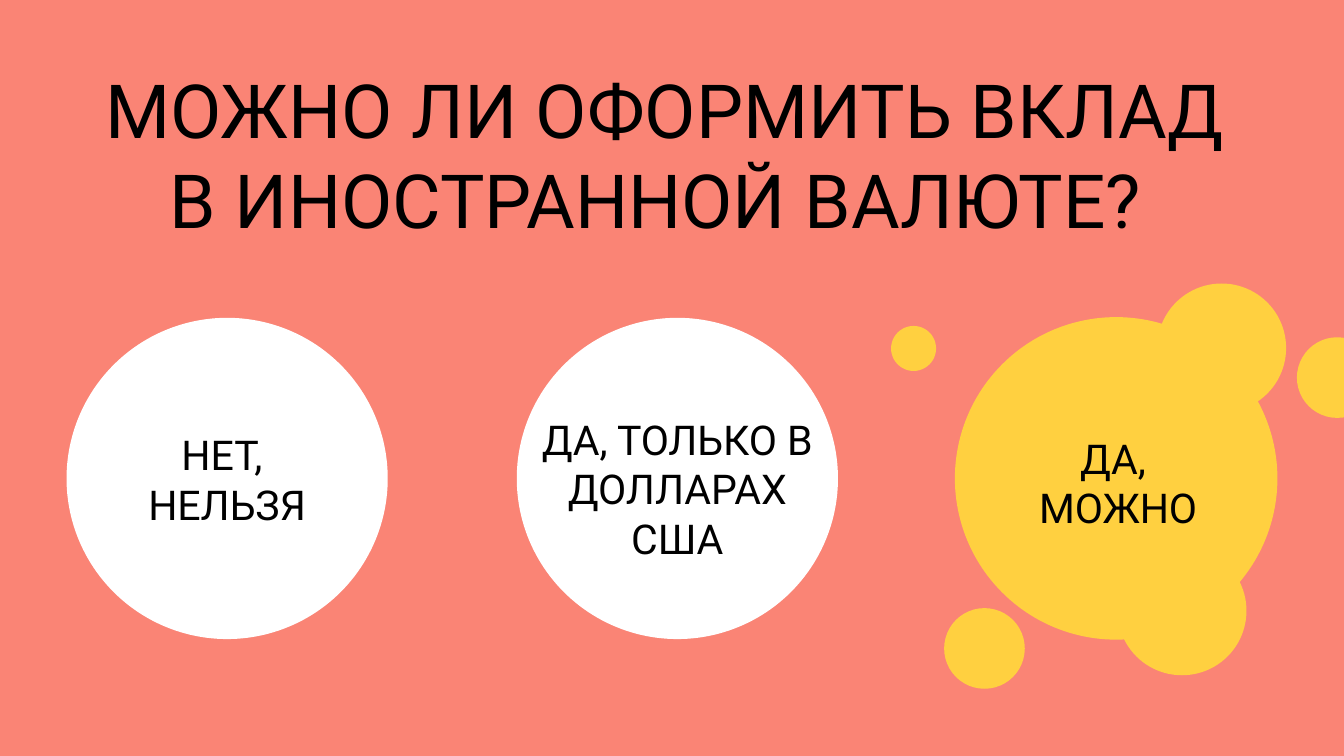
from dataclasses import dataclass

import pptx
import pptx.dml.color
import pptx.enum.shapes
import pptx.enum.text
import pptx.util

PX = 4572
WIDTH, HEIGHT = 2000, 1125
FONT = "Roboto"
COLORS = {"coral": "FA8475", "white": "FFFFFF", "yellow": "FFD040", "text": "000000"}
OVAL = pptx.enum.shapes.MSO_SHAPE.OVAL
RECTANGLE = pptx.enum.shapes.MSO_SHAPE.RECTANGLE


@dataclass
class Circle:
    left: int
    top: int
    size: int
    color: str


@dataclass
class Label:
    text: str
    left: int
    top: int
    width: int
    height: int


ANSWER_CIRCLES = [Circle(left, 473, 478, "white") for left in (99, 769)]
SPLASH = [
    Circle(left, top, size, "yellow")
    for left, top, size in (
        (1421, 472, 480),
        (1722, 422, 192),
        (1663, 813, 192),
        (1405, 905, 120),
        (1930, 502, 120),
        (1326, 485, 67),
    )
]
TITLE = Label("МОЖНО ЛИ ОФОРМИТЬ ВКЛАД \vВ ИНОСТРАННОЙ ВАЛЮТЕ?  ", -66, 24, 2138, 358)
ANSWERS = [
    Label("НЕТ, \vНЕЛЬЗЯ", 105, 546, 466, 334),
    Label("ДА, ТОЛЬКО В ДОЛЛАРАХ США", 775, 561, 466, 332),
    Label("ДА, \vМОЖНО", 1431, 553, 466, 330),
]


def px(n: int) -> pptx.util.Emu:
    return pptx.util.Emu(n * PX)


def rgb(name: str) -> pptx.dml.color.RGBColor:
    return pptx.dml.color.RGBColor.from_string(COLORS[name])


def draw_shape(shapes, kind, left: int, top: int, width: int, height: int, color: str):
    sp = shapes.add_shape(kind, px(left), px(top), px(width), px(height))
    sp.shadow.inherit = False
    sp.fill.solid()
    sp.fill.fore_color.rgb = rgb(color)
    sp.line.fill.background()
    return sp


def draw_circle(shapes, c: Circle) -> None:
    draw_shape(shapes, OVAL, c.left, c.top, c.size, c.size, c.color)


def write_label(sp, label: Label, size: int, anchor: pptx.enum.text.MSO_ANCHOR) -> None:
    sp.left, sp.top = px(label.left), px(label.top)
    sp.width, sp.height = px(label.width), px(label.height)
    tf = sp.text_frame
    tf.word_wrap = True
    tf.auto_size = pptx.enum.text.MSO_AUTO_SIZE.NONE
    tf.vertical_anchor = anchor
    tf.margin_left = tf.margin_right = tf.margin_top = tf.margin_bottom = px(20)
    p = tf.paragraphs[0]
    p.text = label.text
    p.alignment = pptx.enum.text.PP_ALIGN.CENTER
    p.font.name = FONT
    p.font.size = pptx.util.Pt(size)
    p.font.color.rgb = rgb("text")


def main() -> None:
    prs = pptx.Presentation()
    prs.slide_width, prs.slide_height = px(WIDTH), px(HEIGHT)
    s = prs.slides.add_slide(prs.slide_layouts[5])

    backdrop = draw_shape(s.shapes, RECTANGLE, 0, -2, WIDTH, HEIGHT + 3, "coral")
    s.shapes.title.element.addprevious(backdrop.element)
    write_label(s.shapes.title, TITLE, 40, pptx.enum.text.MSO_ANCHOR.BOTTOM)
    for circle in ANSWER_CIRCLES:
        draw_circle(s.shapes, circle)
    splash = s.shapes.add_group_shape()
    for circle in SPLASH:
        draw_circle(splash.shapes, circle)
    for answer in ANSWERS:
        sp = s.shapes.add_textbox(0, 0, 0, 0)
        write_label(sp, answer, 22, pptx.enum.text.MSO_ANCHOR.MIDDLE)

    prs.save("out.pptx")


if __name__ == "__main__":
    main()
